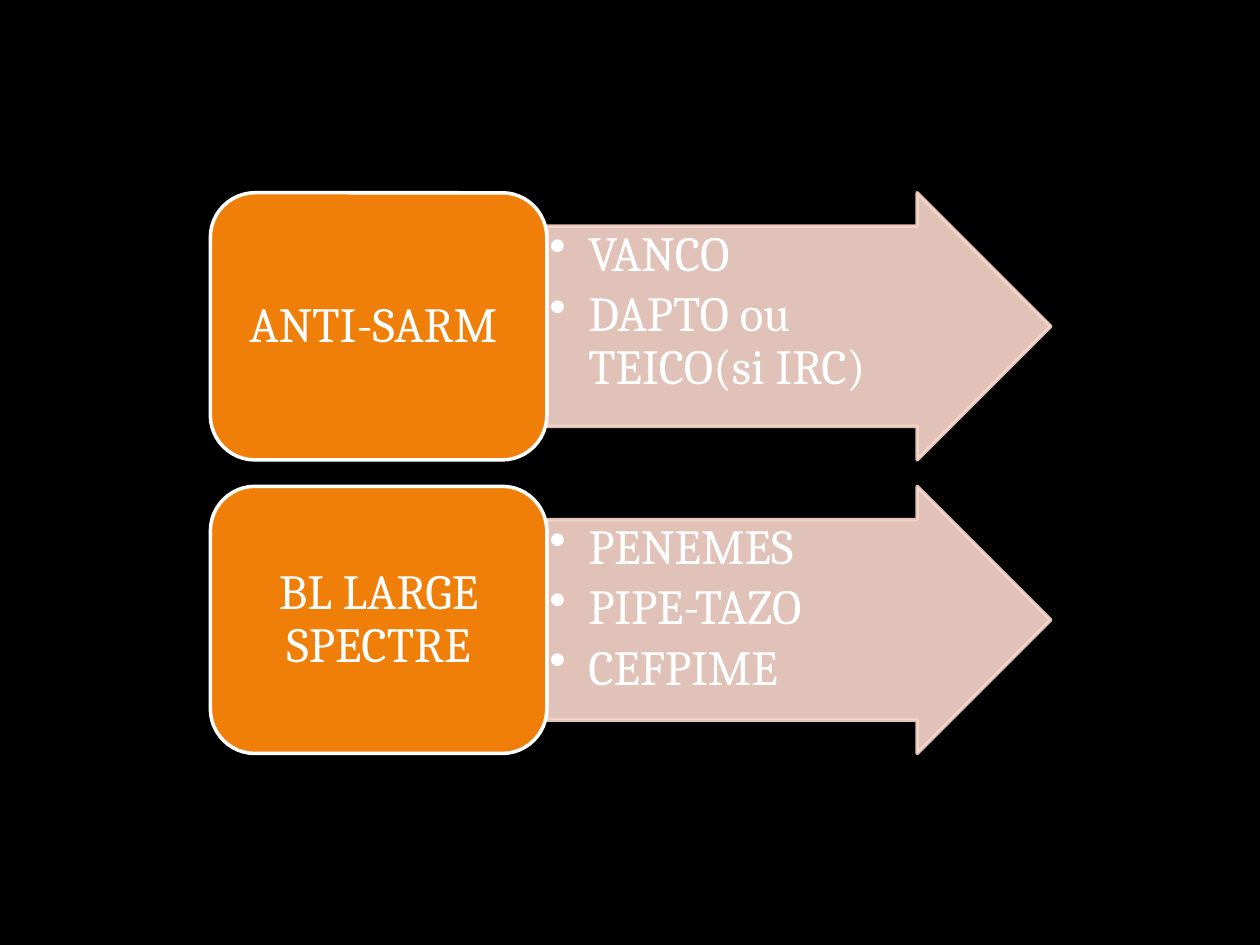
from lxml import etree
from pptx import Presentation
from pptx import util as u
from pptx.dml.color import RGBColor
from pptx.enum import shapes, text
from pptx.oxml.ns import qn

COLORS = {
    "background": "000000",
    "family": "F07F09",
    "arrow": "F9D8CC",
    "white": "FFFFFF",
}
GROUPS = [
    ("ANTI-SARM ", ["VANCO", "DAPTO ou TEICO(si IRC)"]),
    ("BL LARGE SPECTRE", ["PENEMES", "PIPE-TAZO", "CEFPIME"]),
]
LEFT, TOP = 1.67, 1.53
BOX_WIDTH, ARROW_WIDTH, HEIGHT = 2.67, 4, 2.12
PITCH = 2.33


def rgb(name):
    return RGBColor.from_string(COLORS[name])


def add_block(page, kind, left, top, width, fill, line):
    box = page.shapes.add_shape(
        kind, u.Inches(left), u.Inches(top), u.Inches(width), u.Inches(HEIGHT)
    )
    box.shadow.inherit = False
    box.fill.solid()
    box.fill.fore_color.rgb = rgb(fill)
    box.line.color.rgb = rgb(line)
    box.line.width = u.Pt(2)
    return box


def set_opacity(box, percent):
    """Apply one opacity to both the fill and the outline."""
    for color in box._element.spPr.iter(qn("a:srgbClr")):
        etree.SubElement(color, qn("a:alpha"), val=str(percent * 1000))


def add_bullet(para, indent):
    para.level = 1
    props = para._p.get_or_add_pPr()
    props.set("marL", str(u.Inches(indent)))
    props.set("indent", str(-u.Inches(indent)))
    etree.SubElement(props, qn("a:buChar"), char="•")


def write_text(box, lines, insets, anchor, align, space_after=0, indent=None):
    """Fill a shape with paragraphs; insets are left, top, right, bottom."""
    frame = box.text_frame
    frame.word_wrap = True
    frame.vertical_anchor = anchor
    (frame.margin_left, frame.margin_top,
     frame.margin_right, frame.margin_bottom) = map(u.Inches, insets)
    for number, line in enumerate(lines):
        para = frame.add_paragraph() if number else frame.paragraphs[0]
        para.alignment = align
        para.line_spacing = 0.9
        para.space_after = u.Pt(space_after)
        if indent:
            add_bullet(para, indent)
        span = para.add_run()
        span.text = line
        span.font.name = "Cambria"
        span.font.size = u.Pt(28)
        span.font.color.rgb = rgb("white")


def add_drug_arrow(page, top, drugs):
    arrow = add_block(page, shapes.MSO_SHAPE.RIGHT_ARROW, LEFT + BOX_WIDTH, top,
                      ARROW_WIDTH, "arrow", "arrow")
    arrow.adjustments[0] = 0.75
    arrow.adjustments[1] = 0.5
    set_opacity(arrow, 90)
    write_text(arrow, drugs, (0.02, 0.02, 0.54, 0.02), text.MSO_ANCHOR.TOP,
               text.PP_ALIGN.LEFT, space_after=4.2, indent=0.31)


def add_family_box(page, top, family):
    box = add_block(page, shapes.MSO_SHAPE.ROUNDED_RECTANGLE, LEFT, top,
                    BOX_WIDTH, "family", "white")
    write_text(box, [family], (0.12, 0.06, 0.12, 0.06), text.MSO_ANCHOR.MIDDLE,
               text.PP_ALIGN.CENTER)


def main():
    deck = Presentation()
    deck.slide_width, deck.slide_height = u.Inches(10), u.Inches(7.5)
    page = deck.slides.add_slide(deck.slide_layouts[6])
    page.background.fill.solid()
    page.background.fill.fore_color.rgb = rgb("background")
    for row, (family, drugs) in enumerate(GROUPS):
        top = TOP + row * PITCH
        add_drug_arrow(page, top, drugs)
        add_family_box(page, top, family)
    deck.save("out.pptx")


if __name__ == "__main__":
    main()
